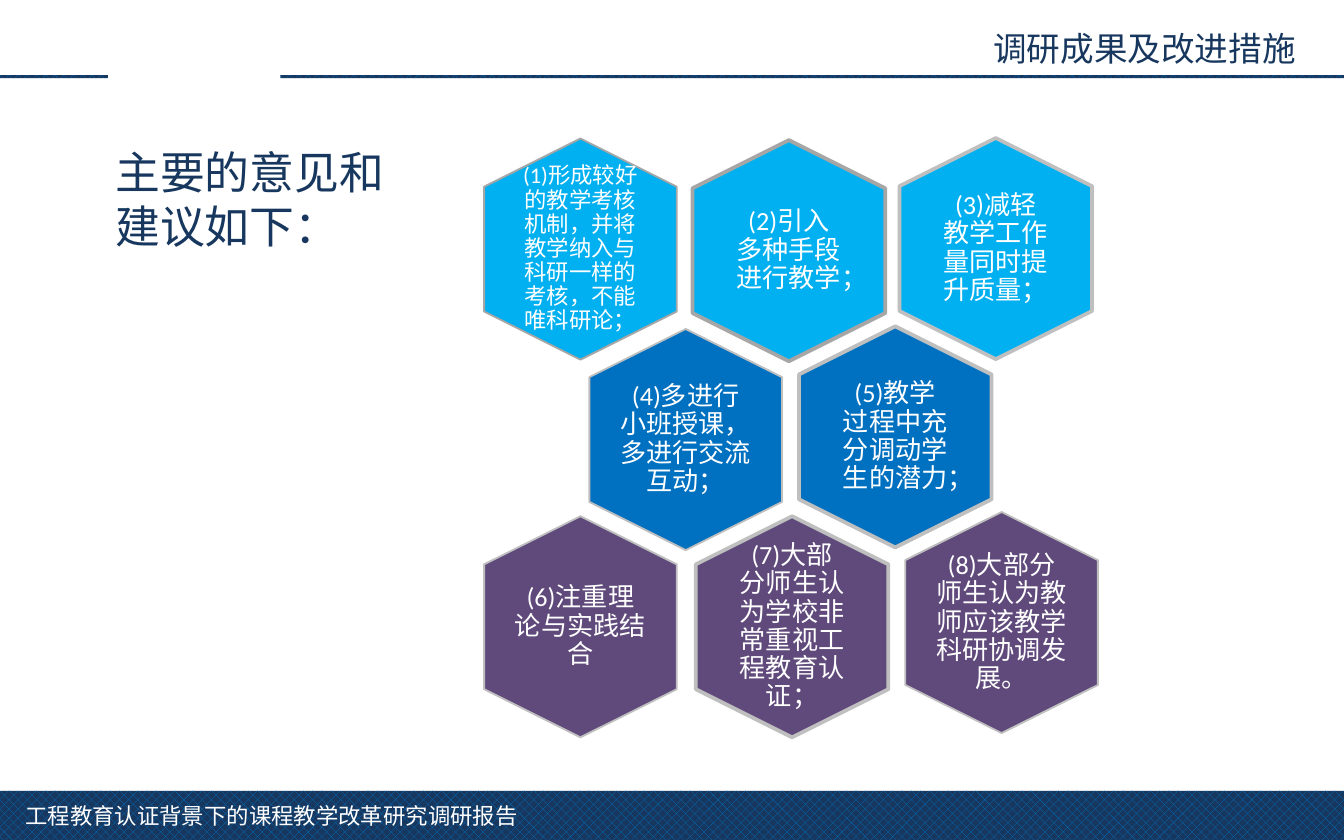
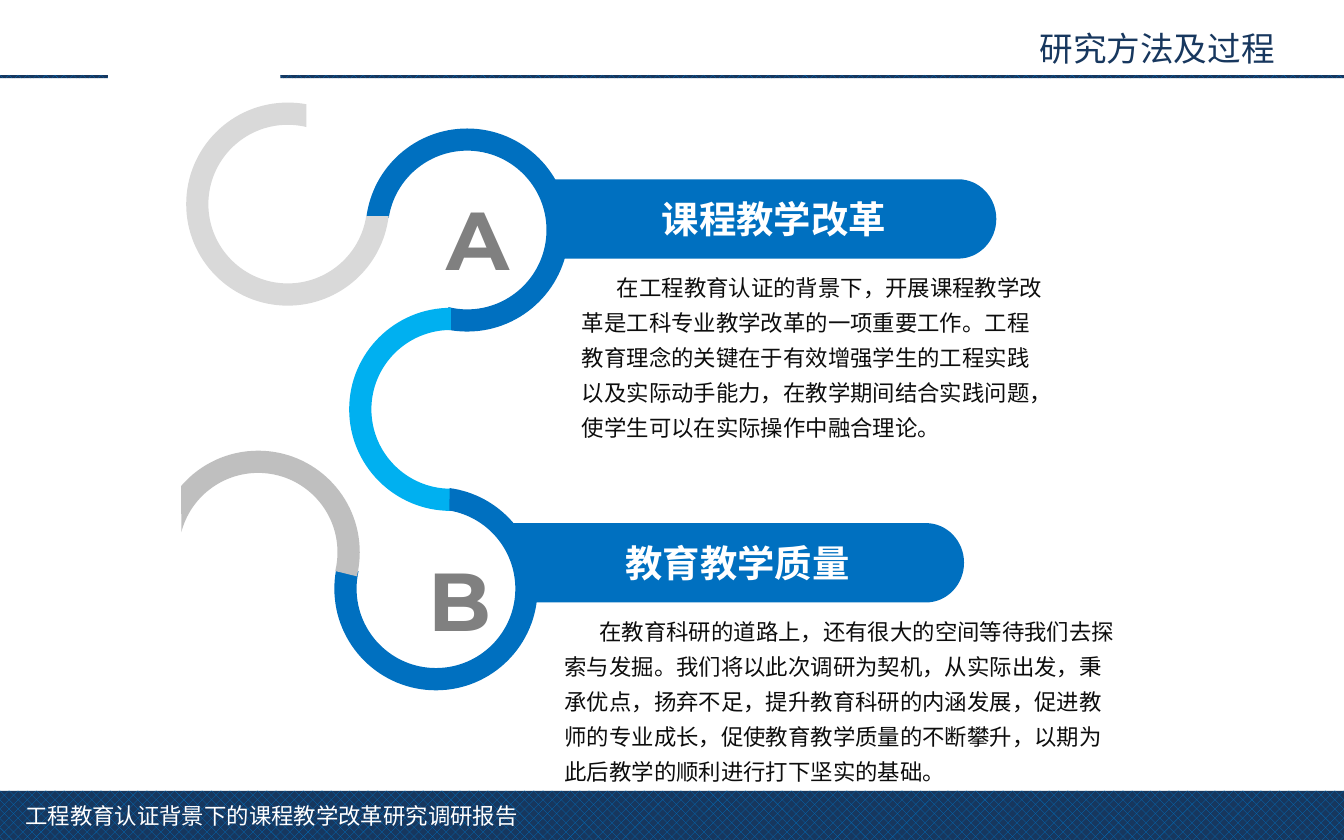
from math import ceil, cos, floor, radians, sin, tan

from lxml.etree import SubElement
from pptx import Presentation
from pptx.dml.color import RGBColor
from pptx.enum.dml import MSO_PATTERN_TYPE as Pattern
from pptx.enum.shapes import MSO_SHAPE as Shape
from pptx.enum.text import MSO_ANCHOR as Anchor
from pptx.enum.text import MSO_AUTO_SIZE as AutoSize
from pptx.enum.text import PP_ALIGN as Align
from pptx.oxml.ns import qn
from pptx.util import Cm, Pt

NAVY = RGBColor(0x17, 0x37, 0x5E)
BLUE = RGBColor(0x00, 0x70, 0xC0)
SKY = RGBColor(0x00, 0xB0, 0xF0)
PURPLE = RGBColor(0x60, 0x4A, 0x7B)
WHITE = RGBColor(0xFF, 0xFF, 0xFF)
INK = RGBColor(0x0D, 0x0D, 0x0D)
DARK_GREY = RGBColor(0x80, 0x80, 0x80)
MID_GREY = RGBColor(0xA6, 0xA6, 0xA6)
SILVER = RGBColor(0xBF, 0xBF, 0xBF)
PALE_GREY = RGBColor(0xD9, 0xD9, 0xD9)

HAN = "Noto Sans CJK SC"
LATIN = "Calibri"
WIDTH, HEIGHT = 25.4, 15.88
RULE_TOP, RULE_HEIGHT = 1.42, 0.06
FOOTER_TOP = 14.95
FOOTER = "工程教育认证背景下的课程教学改革研究调研报告"

HEX_WIDTH, HEX_HEIGHT, HEX_SHOULDER = 3.64, 4.18, 0.91
THIN = {"line": 1, "inset_x": 0.56, "inset_y": 0.66}
THICK = {"line": 2, "inset_x": 0.81, "inset_y": 0.91}
OPINIONS = [
    (3.94, 0.03, SKY, MID_GREY, THICK, 14, "(2)引入多种手段进行教学；"),
    (0, 0, SKY, MID_GREY, THIN, 12,
     "(1)形成较好的教学考核机制，并将教学纳入与科研一样的考核，不能唯科研论；"),
    (7.85, -0.01, SKY, SILVER, THICK, 14, "(3)减轻教学工作量同时提升质量；"),
    (1.99, 3.6, BLUE, SILVER, THIN, 14, "(4)多进行小班授课，多进行交流互动；"),
    (4.0, 7.14, PURPLE, SILVER, THICK, 14,
     "(7)大部分师生认为学校非常重视工程教育认证；"),
    (0, 7.14, PURPLE, SILVER, THIN, 14, "(6)注重理论与实践结合"),
    (5.95, 3.55, BLUE, SILVER, THICK, 14, "(5)教学过程中充分调动学生的潜力；"),
    (7.96, 7.06, PURPLE, SILVER, THIN, 14,
     "(8)大部分师生认为教师应该教学科研协调发展。"),
]

OUTER_RADIUS, INNER_RADIUS = 1.92, 1.5
RINGS = [
    (5.4, 2.42, BLUE, (187, 460.7), (189, 463.6)),
    (5.09, 5.81, SKY, (90, 270), (90, 270)),
    (4.81, 9.2, BLUE, (-82.3, 190), (-80.2, 192.8)),
    (2.01, 1.93, PALE_GREY, (6.8, 280.6), (8.7, 283.6)),
    (1.45, 8.51, SILVER, (220.7, 373.7), (194.7, 373.7)),
]

BAR_HEIGHT, BAR_CAP = 1.5, 0.72
TOPICS = [
    {"box": (10.43, 3.39, 8.4), "slant": 0, "heading": "课程教学改革",
     "letter": "A", "letter_at": (-2.25, 0.05), "body_at": (0.32, 9.37),
     "body": "在工程教育认证的背景下，开展课程教学改革是工科专业教学改革的一项重要工作。"
             "工程教育理念的关键在于有效增强学生的工程实践以及实际动手能力，"
             "在教学期间结合实践问题，使学生可以在实际操作中融合理论。"},
    {"box": (9.66, 9.89, 8.56), "slant": 0.15, "heading": "教育教学质量",
     "letter": "B", "letter_at": (-1.81, 0.37), "body_at": (0.76, 11.07),
     "body": "在教育科研的道路上，还有很大的空间等待我们去探索与发掘。"
             "我们将以此次调研为契机，从实际出发，秉承优点，扬弃不足，"
             "提升教育科研的内涵发展，促进教师的专业成长，"
             "促使教育教学质量的不断攀升，以期为此后教学的顺利进行打下坚实的基础。"},
]


def apply(target, values):
    for name, value in values.items():
        setattr(target, name, value)


def write(frame, lines, size, color, font=HAN, align=Align.LEFT, bold=False,
          spacing=1.0, indent=0):
    for number, line in enumerate(lines):
        para = frame.add_paragraph() if number else frame.paragraphs[0]
        apply(para, {"alignment": align, "line_spacing": spacing})
        if indent:
            para._p.get_or_add_pPr().set("indent", str(Cm(indent)))
        span = para.add_run()
        span.text = line
        apply(span.font, {"size": Pt(size), "name": font, "bold": bold})
        span.font.color.rgb = color
        SubElement(span._r.get_or_add_rPr(), qn("a:ea")).set("typeface", HAN)


def add_text(page, box, lines, size, color, wrap=True, **style):
    frame = page.shapes.add_textbox(*map(Cm, box)).text_frame
    apply(frame, {"word_wrap": wrap, "auto_size": AutoSize.SHAPE_TO_FIT_TEXT})
    write(frame, lines, size, color, **style)


def bend(outline, segments):
    straights = list(outline._element.iter(qn("a:lnTo")))
    for straight, segment in zip(straights, segments):
        if len(segment) == 1:
            continue
        track = straight.getparent()
        curve = SubElement(track, qn("a:cubicBezTo"))
        for x, y in segment:
            point = SubElement(curve, qn("a:pt"))
            point.set("x", str(x - outline.left))
            point.set("y", str(y - outline.top))
        track.replace(straight, curve)


def add_outline(page, left, top, segments, color):
    placed = [[(Cm(left + x), Cm(top + y)) for x, y in segment]
              for segment in segments]
    ends = [segment[-1] for segment in placed]
    builder = page.shapes.build_freeform(*ends[0])
    builder.add_line_segments(ends[1:], close=True)
    outline = builder.convert_to_shape()
    bend(outline, placed[1:])
    outline.shadow.inherit = False
    outline.fill.solid()
    outline.fill.fore_color.rgb = color
    outline.line.fill.background()
    return outline


def arc(center_x, center_y, radius_x, radius_y, start, end):
    def spot(angle, pull=0):
        turn = radians(angle)
        return (center_x + radius_x * (cos(turn) - pull * sin(turn)),
                center_y + radius_y * (sin(turn) + pull * cos(turn)))

    low, high = sorted((start, end))
    quarters = [90 * n for n in range(floor(low / 90) + 1, ceil(high / 90))]
    stops = [low, *quarters, high]
    if start > end:
        stops.reverse()
    segments = [[spot(start)]]
    for first, last in zip(stops, stops[1:]):
        pull = 4 / 3 * tan(radians(last - first) / 4)
        segments.append([spot(first, pull), spot(last, -pull), spot(last)])
    return segments


def draw_frame(page, master):
    bands = [(5.3, RULE_TOP, WIDTH - 5.3, RULE_HEIGHT),
             (0, FOOTER_TOP, WIDTH, HEIGHT - FOOTER_TOP),
             (0, RULE_TOP, 2.04, RULE_HEIGHT)]
    for box in bands:
        band = page.shapes.add_shape(Shape.RECTANGLE, *map(Cm, box))
        band.shadow.inherit = False
        band.fill.patterned()
        band.fill.pattern = Pattern.PERCENT_50
        band.fill.fore_color.rgb = BLUE
        band.fill.back_color.rgb = NAVY
        band.line.fill.background()
    add_text(page, (0.18, 15.04, 9.91, 0.77), [FOOTER], 12, WHITE,
             wrap=False, align=Align.CENTER)
    for number, part in enumerate(list(page.shapes), 101):
        part._element.nvSpPr.cNvPr.set("id", str(number))
        master.shapes._spTree.append(part._element)


def draw_title(page, title, left, width):
    add_text(page, (left, 0.41, width, 1.03), [title], 18, NAVY,
             align=Align.CENTER)


def draw_honeycomb(page, left, top):
    low = HEX_HEIGHT - HEX_SHOULDER
    middle = HEX_WIDTH / 2
    corners = [(middle, 0), (HEX_WIDTH, HEX_SHOULDER), (HEX_WIDTH, low),
               (middle, HEX_HEIGHT), (0, low), (0, HEX_SHOULDER)]
    segments = [[corner] for corner in corners]
    for x, y, color, edge, border, size, opinion in OPINIONS:
        cell = add_outline(page, left + x, top + y, segments, color)
        cell.line.color.rgb = edge
        cell.line.width = Pt(border["line"])
        side, end = Cm(border["inset_x"]), Cm(border["inset_y"])
        apply(cell.text_frame, {
            "margin_left": side, "margin_right": side, "margin_top": end,
            "margin_bottom": end, "word_wrap": True,
            "vertical_anchor": Anchor.MIDDLE})
        write(cell.text_frame, [opinion], size, WHITE, font=LATIN,
              align=Align.CENTER, spacing=0.9)


def draw_chain(page, left, top):
    for x, y, color, outer, inner in RINGS:
        rim = arc(x, y, OUTER_RADIUS, OUTER_RADIUS, *outer)
        hole = arc(x, y, INNER_RADIUS, INNER_RADIUS, *inner[::-1])
        add_outline(page, left, top, rim + hole, color)


def draw_topic(page, topic):
    left, top, width = topic["box"]
    half = BAR_HEIGHT / 2
    cap = arc(width - BAR_CAP, half, BAR_CAP, half, -90, 90)
    segments = [[(0, 0)], *cap, [(topic["slant"], BAR_HEIGHT)]]
    bar = add_outline(page, left, top, segments, BLUE)
    apply(bar.text_frame, {"word_wrap": True, "vertical_anchor": Anchor.MIDDLE})
    write(bar.text_frame, [topic["heading"]], 20, WHITE, align=Align.CENTER,
          bold=True)
    x, y = topic["letter_at"]
    add_text(page, (left + x, top + y, 1.4, 2.14), [topic["letter"]], 44,
             DARK_GREY, font="Montserrat", bold=True)
    x, body_width = topic["body_at"]
    add_text(page, (left + x, top + BAR_HEIGHT + 0.02, body_width, 3.53),
             [topic["body"]], 12, INK, spacing=1.3, indent=0.66)


def build_opinions(page):
    draw_honeycomb(page, 9.15, 2.62)
    add_text(page, (1.93, 2.62, 6.93, 2.31), ["主要的意见和", "建议如下："], 24,
             NAVY, font=LATIN)
    draw_title(page, "调研成果及改进措施", 18.49, 6.28)


def build_methods(page):
    draw_chain(page, 3.43, 1.93)
    for topic in TOPICS:
        draw_topic(page, topic)
    draw_title(page, "研究方法及过程", 18.97, 5.8)


def main():
    deck = Presentation()
    apply(deck, {"slide_width": Cm(WIDTH), "slide_height": Cm(HEIGHT)})
    pages = [deck.slides.add_slide(deck.slide_layouts[6]) for _ in range(2)]
    draw_frame(pages[0], deck.slide_master)
    for build, page in zip((build_opinions, build_methods), pages):
        build(page)
    deck.save("out.pptx")


if __name__ == "__main__":
    main()
